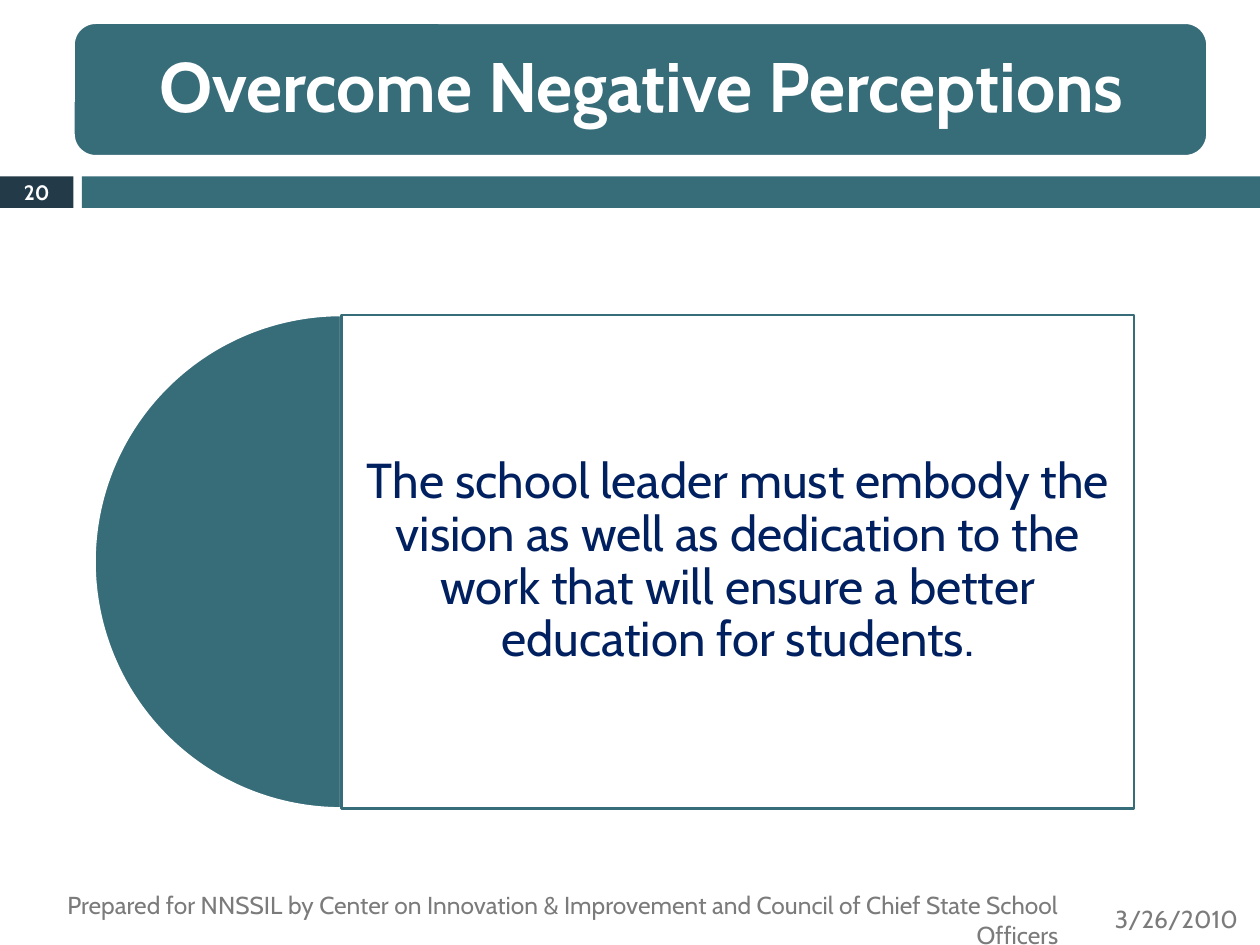
import pptx
import pptx.dml.color
import pptx.enum.shapes
import pptx.enum.text
import pptx.oxml
import pptx.oxml.ns
import pptx.util

Pt = pptx.util.Pt
RGBColor = pptx.dml.color.RGBColor
SHAPE = pptx.enum.shapes.MSO_SHAPE
ALIGN = pptx.enum.text.PP_ALIGN

WHITE = RGBColor(0xFF, 0xFF, 0xFF)
TEAL = RGBColor(0x37, 0x6C, 0x79)
SLATE = RGBColor(0x23, 0x3B, 0x49)
NAVY = RGBColor(0x00, 0x20, 0x60)
GRAY = RGBColor(0x7B, 0x7B, 0x7B)

deck = pptx.Presentation()
deck.slide_width = Pt(720)
deck.slide_height = Pt(540)
page = deck.slides.add_slide(deck.slide_layouts[5])


def add_block(kind, left, top, width, height, fill, line=None):
    block = page.shapes.add_shape(kind, Pt(left), Pt(top), Pt(width), Pt(height))
    block.shadow.inherit = False
    block.fill.solid()
    block.fill.fore_color.rgb = fill
    if line is None:
        block.line.fill.background()
    else:
        block.line.color.rgb = line
        block.line.width = Pt(1.5)
    return block


def write_text(box, text, size, color, align, bold=False, inset=None, spacing=None):
    frame = box.text_frame
    frame.word_wrap = True
    frame.auto_size = pptx.enum.text.MSO_AUTO_SIZE.NONE
    frame.vertical_anchor = pptx.enum.text.MSO_ANCHOR.MIDDLE
    if inset is not None:
        frame.margin_left = frame.margin_right = Pt(inset)
        frame.margin_top = frame.margin_bottom = Pt(inset)
    para = frame.paragraphs[0]
    para.alignment = align
    para.line_spacing = spacing
    span = para.add_run()
    span.text = text
    span.font.name = "Cabin"
    span.font.size = Pt(size)
    span.font.bold = bold
    span.font.color.rgb = color


add_block(SHAPE.RECTANGLE, 0, 100.8, 42, 18, SLATE)
add_block(SHAPE.RECTANGLE, 46.8, 100.8, 673.2, 18, TEAL)
add_block(SHAPE.ROUNDED_RECTANGLE, 42, 13, 648, 76.3, TEAL, WHITE)

title = page.shapes.title
title.left, title.top, title.width, title.height = Pt(46), Pt(16.6), Pt(641), Pt(69)
page.shapes._spTree.append(title._element)
write_text(title, "Overcome Negative Perceptions", 40, WHITE, ALIGN.CENTER,
           bold=True, inset=12, spacing=0.9)

half_disc = add_block(SHAPE.PIE, 54, 180, 282, 282, TEAL, WHITE)
half_disc.adjustments[0] = 54
half_disc.adjustments[1] = 162

statement = add_block(SHAPE.RECTANGLE, 195, 180, 453, 282, WHITE, TEAL)
fill_color = statement.fill._xPr.find(pptx.oxml.ns.qn("a:solidFill"))[0]
fill_color.append(pptx.oxml.parse_xml(
    f'<a:alpha {pptx.oxml.ns.nsdecls("a")} val="90000"/>'))
write_text(statement,
           "The school leader must embody the vision as well as dedication to the "
           "work that will ensure a better education for students.",
           28, NAVY, ALIGN.CENTER, inset=8.4, spacing=0.9)

notices = [
    (0, 511.2, 612, 28.8, 14, GRAY, ALIGN.RIGHT, False,
     "Prepared for NNSSIL by Center on Innovation & Improvement and Council of "
     "Chief State School Officers"),
    (630, 510, 90, 30, 14, GRAY, ALIGN.LEFT, False, "3/26/2010"),
    (0, 100, 42, 19.5, 11.9, WHITE, ALIGN.CENTER, True, "20"),
]
for left, top, width, height, size, color, align, bold, text in notices:
    box = page.shapes.add_textbox(Pt(left), Pt(top), Pt(width), Pt(height))
    write_text(box, text, size, color, align, bold)

deck.save("out.pptx")
